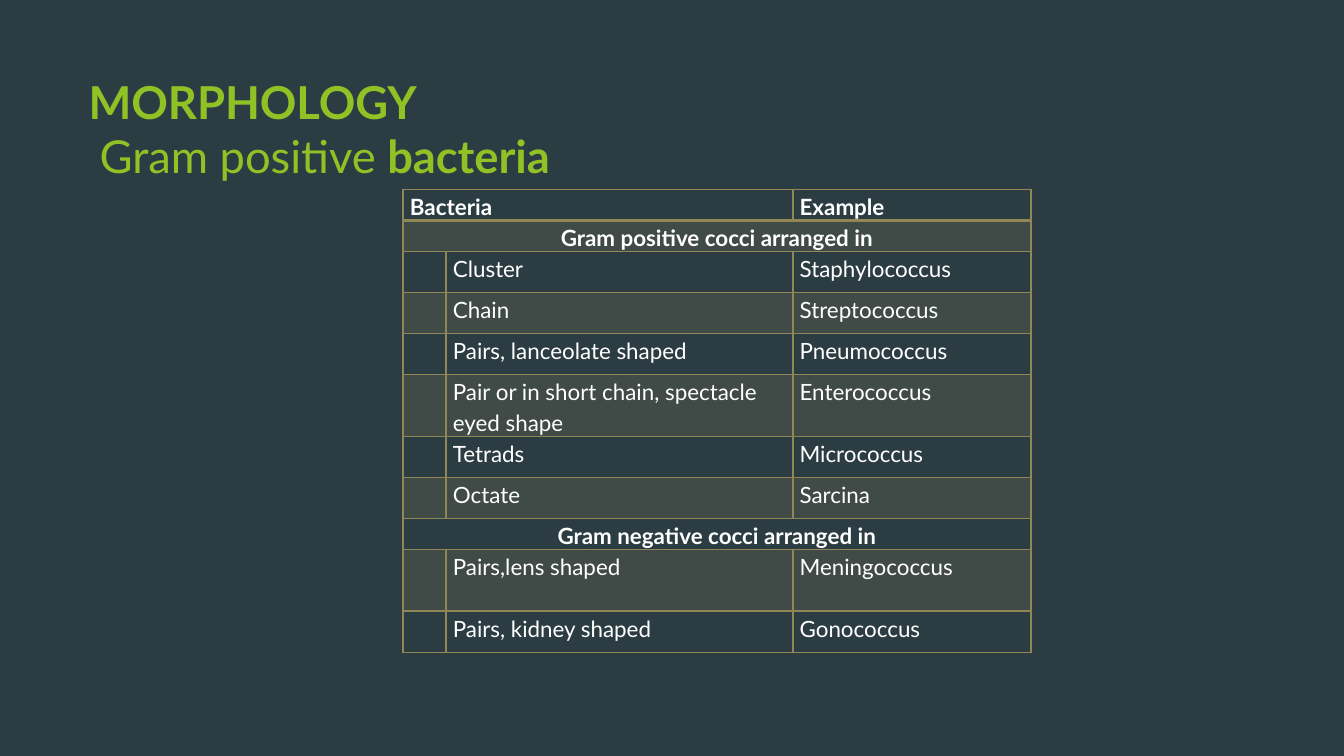
from dataclasses import dataclass

from lxml.etree import SubElement
from pptx import Presentation
from pptx.dml.color import RGBColor
from pptx.enum.text import MSO_ANCHOR, PP_ALIGN
from pptx.oxml.ns import qn
from pptx.util import Inches, Pt

SLIDE_WIDTH = 10
SLIDE_HEIGHT = SLIDE_WIDTH * 9 / 16
TITLE_LINES = [
    [("MORPHOLOGY", True)],
    [(" ", True), ("Gram positive ", False), ("bacteria", True)],
]
ROWS = [
    ("header", "Bacteria", "Example"),
    ("section", "Gram positive cocci arranged in"),
    ("item", "Cluster", "Staphylococcus"),
    ("item", "Chain", "Streptococcus"),
    ("item", "Pairs, lanceolate shaped", "Pneumococcus"),
    ("tall", "Pair or in short chain, spectacle eyed shape", "Enterococcus"),
    ("item", "Tetrads", "Micrococcus"),
    ("item", "Octate", "Sarcina"),
    ("section", "Gram negative cocci arranged in"),
    ("tall", "Pairs,lens shaped", "Meningococcus"),
    ("item", "Pairs, kidney shaped", "Gonococcus"),
]
COLUMN_WIDTHS = [0.32, 2.58, 1.77]
ROW_HEIGHT = 0.23


@dataclass(frozen=True)
class Theme:
    font: str = "Lato"
    background: str = "2C3C43"
    title: str = "90C226"
    text: str = "FFFFFF"
    accent: str = "918655"
    band_opacity: int = 20
    title_size: float = 24.3
    text_size: float = 12


THEME = Theme()


def add_run(paragraph, text, size, color, bold):
    run = paragraph.add_run()
    run.text = text
    run.font.name = THEME.font
    run.font.size = Pt(size)
    run.font.bold = bold
    run.font.color.rgb = RGBColor.from_string(color)


def set_borders(cell, bottom_width):
    properties = cell._tc.get_or_add_tcPr()
    widths = {"a:lnL": 1, "a:lnR": 1, "a:lnT": 1, "a:lnB": bottom_width}
    for index, (tag, width) in enumerate(widths.items()):
        line = SubElement(properties, qn(tag), w=str(Pt(width)))
        fill = SubElement(line, qn("a:solidFill"))
        SubElement(fill, qn("a:srgbClr"), val=THEME.accent)
        properties.remove(line)
        properties.insert(index, line)


def style_cell(cell, banded, bottom_width):
    cell.margin_left = cell.margin_right = Inches(0.05)
    cell.margin_top = cell.margin_bottom = 0
    if banded:
        cell.fill.solid()
        cell.fill.fore_color.rgb = RGBColor.from_string(THEME.accent)
        color = cell._tc.tcPr.find(".//" + qn("a:srgbClr"))
        SubElement(color, qn("a:alpha"), val=str(THEME.band_opacity * 1000))
    else:
        cell.fill.background()
    set_borders(cell, bottom_width)


def write_cell(cell, text, bold, alignment=PP_ALIGN.LEFT):
    paragraph = cell.text_frame.paragraphs[0]
    paragraph.alignment = alignment
    paragraph.line_spacing = 1.15
    add_run(paragraph, text, THEME.text_size, THEME.text, bold)


def add_title(slide):
    title = slide.shapes.title
    title.left, title.top = Inches(0.56), Inches(0.5)
    title.width, title.height = Inches(7.05), Inches(1.08)
    frame = title.text_frame
    frame.word_wrap = True
    frame.vertical_anchor = MSO_ANCHOR.TOP
    paragraph = frame.paragraphs[0]
    paragraph.alignment = PP_ALIGN.LEFT
    for index, line in enumerate(TITLE_LINES):
        if index:
            paragraph.add_line_break()
        for text, bold in line:
            add_run(paragraph, text, THEME.title_size, THEME.title, bold)


def add_bacteria_table(slide):
    heights = [ROW_HEIGHT * (2 if row[0] == "tall" else 1) for row in ROWS]
    table = slide.shapes.add_table(
        len(ROWS), len(COLUMN_WIDTHS), Inches(3), Inches(1.41),
        Inches(sum(COLUMN_WIDTHS)), Inches(sum(heights))).table
    table.first_row = table.horz_banding = False
    for column, width in zip(table.columns, COLUMN_WIDTHS):
        column.width = Inches(width)
    for index, (kind, *texts) in enumerate(ROWS):
        table.rows[index].height = Inches(heights[index])
        cells = [table.cell(index, column) for column in range(len(COLUMN_WIDTHS))]
        for cell in cells:
            style_cell(cell, index % 2 == 1, 2 if kind == "header" else 1)
        if kind == "section":
            cells[0].merge(cells[2])
            write_cell(cells[0], texts[0], True, PP_ALIGN.CENTER)
        elif kind == "header":
            cells[0].merge(cells[1])
            write_cell(cells[0], texts[0], True)
            write_cell(cells[2], texts[1], True)
        else:
            for cell, text in zip(cells[1:], texts):
                write_cell(cell, text, False)


def main():
    presentation = Presentation()
    presentation.slide_width = Inches(SLIDE_WIDTH)
    presentation.slide_height = Inches(SLIDE_HEIGHT)
    slide = presentation.slides.add_slide(presentation.slide_layouts[5])
    slide.background.fill.solid()
    slide.background.fill.fore_color.rgb = RGBColor.from_string(THEME.background)
    add_title(slide)
    add_bacteria_table(slide)
    presentation.save("out.pptx")


if __name__ == "__main__":
    main()
